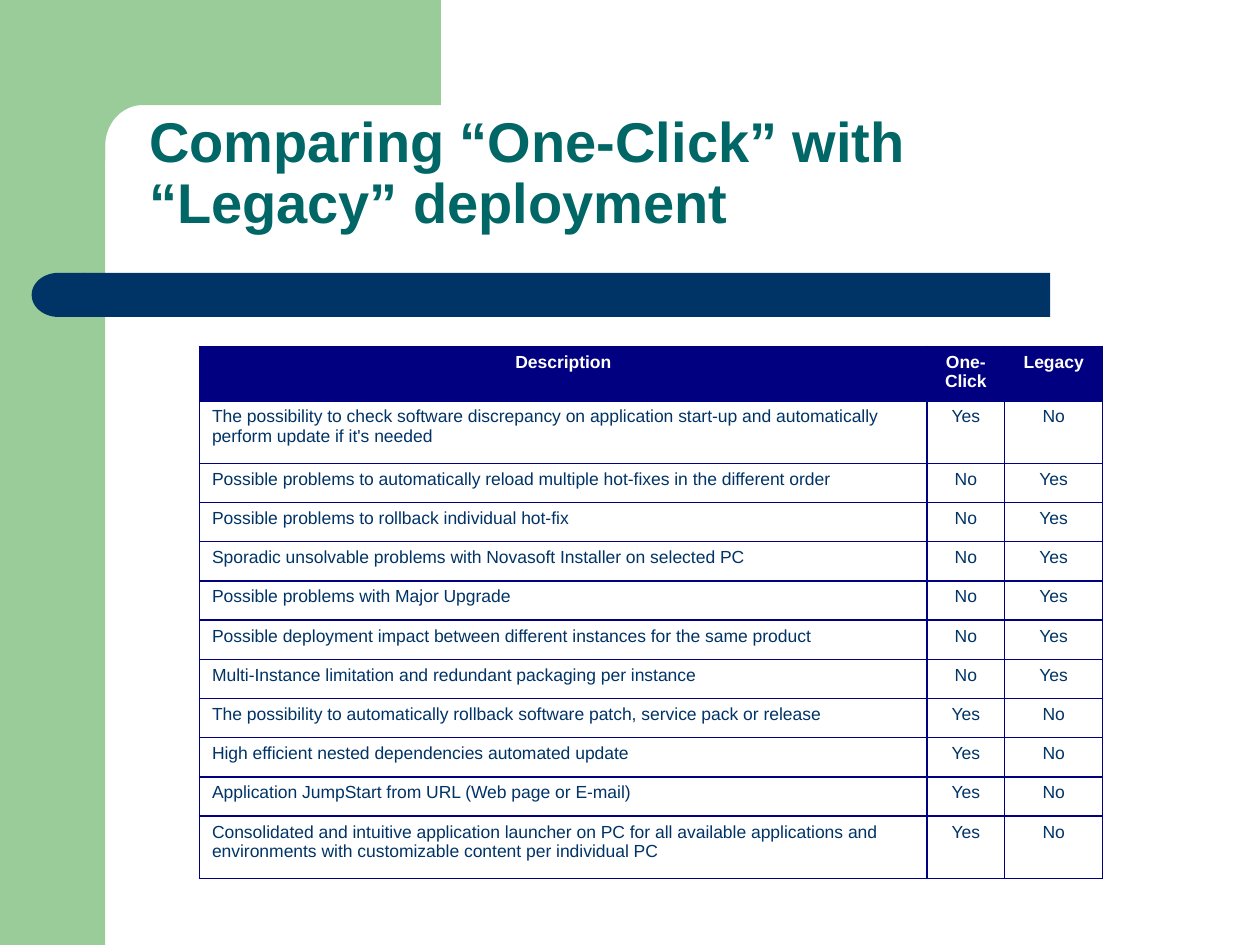
from math import cos, pi, sin

from lxml.etree import SubElement
from pptx import Presentation
from pptx.dml.color import RGBColor
from pptx.enum.shapes import MSO_SHAPE
from pptx.enum.text import MSO_ANCHOR, PP_ALIGN
from pptx.oxml.ns import qn
from pptx.util import Cm, Pt

GREEN, NAVY, TEAL = "99CC99", "003366", "006666"
GRID, WHITE = "000080", "FFFFFF"

HEADINGS = ("Description", "One-Click", "Legacy")
COMPARISON = [
    ("The possibility to check software discrepancy on application start-up and automatically "
     "perform update if it's needed", "Yes", "No"),
    ("Possible problems to automatically reload multiple hot-fixes in the different order", "No", "Yes"),
    ("Possible problems to rollback individual hot-fix", "No", "Yes"),
    ("Sporadic unsolvable problems with Novasoft Installer on selected PC", "No", "Yes"),
    ("Possible problems with Major Upgrade", "No", "Yes"),
    ("Possible deployment impact between different instances for the same product", "No", "Yes"),
    ("Multi-Instance limitation and redundant packaging per instance", "No", "Yes"),
    ("The possibility to automatically rollback software patch, service pack or release", "Yes", "No"),
    ("High efficient nested dependencies automated update", "Yes", "No"),
    ("Application JumpStart from URL (Web page or E-mail)", "Yes", "No"),
    ("Consolidated and intuitive application launcher on PC for all available applications and "
     "environments with customizable content per individual PC", "Yes", "No"),
]
COLUMN_WIDTHS = (14.67, 1.56, 1.98)
ROW_HEIGHTS = [1.1, 1.26] + [0.79] * 9 + [1.26]


def colour(value):
    return RGBColor.from_string(value)


class SlideBuilder:
    font = "Arial"

    def __init__(self, slide):
        self.slide = slide

    def paint(self, shape, fill):
        shape.shadow.inherit = False
        shape.fill.solid()
        shape.fill.fore_color.rgb = colour(fill)
        shape.line.fill.background()

    def text_run(self, paragraph, text, size, ink, bold=False):
        run = paragraph.add_run()
        run.text = text
        run.font.name = self.font
        run.font.size = Pt(size)
        run.font.bold = bold
        run.font.color.rgb = colour(ink)

    def block(self, preset, box, fill):
        shape = self.slide.shapes.add_shape(preset, *map(Cm, box))
        self.paint(shape, fill)
        return shape

    def outline(self, points, fill):
        corners = [(Cm(x), Cm(y)) for x, y in points]
        builder = self.slide.shapes.build_freeform(*corners[0])
        builder.add_line_segments(corners[1:], close=True)
        self.paint(builder.convert_to_shape(), fill)

    def title(self, text, box):
        heading = self.slide.shapes.title
        heading.left, heading.top, heading.width, heading.height = map(Cm, box)
        frame = heading.text_frame
        frame.word_wrap = True
        frame.vertical_anchor = MSO_ANCHOR.BOTTOM
        paragraph = frame.paragraphs[0]
        paragraph.alignment = PP_ALIGN.LEFT
        paragraph.line_spacing = 0.9
        self.text_run(paragraph, text, 32, TEAL, bold=True)

    def border(self, cell):
        properties = cell._tc.get_or_add_tcPr()
        for side in ("lnL", "lnR", "lnT", "lnB"):
            edge = SubElement(properties, qn(f"a:{side}"), w=str(Pt(1)))
            fill = SubElement(edge, qn("a:solidFill"))
            SubElement(fill, qn("a:srgbClr"), val=GRID)

    def cell(self, cell, text, header, centred):
        self.border(cell)
        if header:
            cell.fill.solid()
            cell.fill.fore_color.rgb = colour(GRID)
        else:
            cell.fill.background()
        paragraph = cell.text_frame.paragraphs[0]
        paragraph.alignment = PP_ALIGN.CENTER if centred else PP_ALIGN.LEFT
        self.text_run(paragraph, text, 10, WHITE if header else NAVY, bold=header)

    def table(self, rows, left, top, widths, heights):
        box = (left, top, sum(widths), sum(heights))
        table = self.slide.shapes.add_table(len(rows), len(widths), *map(Cm, box)).table
        table.horz_banding = False
        for column, width in zip(table.columns, widths):
            column.width = Cm(width)
        for row, height in zip(table.rows, heights):
            row.height = Cm(height)
        for r, texts in enumerate(rows):
            for c, text in enumerate(texts):
                self.cell(table.cell(r, c), text, header=r == 0, centred=r == 0 or c > 0)


def main():
    deck = Presentation()
    deck.slide_width, deck.slide_height = Cm(25.4), Cm(19.05)
    page = SlideBuilder(deck.slides.add_slide(deck.slide_layouts[5]))

    page.block(MSO_SHAPE.RECTANGLE, (0, 0, 2.12, 19.05), GREEN)
    steps = 24
    angles = [pi / 2 * step / steps for step in range(steps + 1)]
    bend = [(2.87 - 0.75 * sin(a), 2.95 - 0.83 * cos(a)) for a in angles]
    page.outline([(8.89, 0), (8.89, 2.12), *bend, (2.12, 3.25), (1.27, 3.25), (1.27, 0)], GREEN)

    bar = page.block(MSO_SHAPE.ROUNDED_RECTANGLE, (1.69, 5.5, 19.48, 0.89), NAVY)
    bar.adjustments[0] = 0
    cap = page.block(MSO_SHAPE.FLOWCHART_DELAY, (0.64, 5.5, 1.08, 0.89), NAVY)
    cap._element.spPr.find(qn("a:xfrm")).set("flipH", "1")

    page.title("Comparing “One-Click” with “Legacy” deployment", (2.75, 2.33, 20.53, 2.54))
    page.table([HEADINGS, *COMPARISON], 4.02, 6.98, COLUMN_WIDTHS, ROW_HEIGHTS)
    deck.save("out.pptx")


if __name__ == "__main__":
    main()
